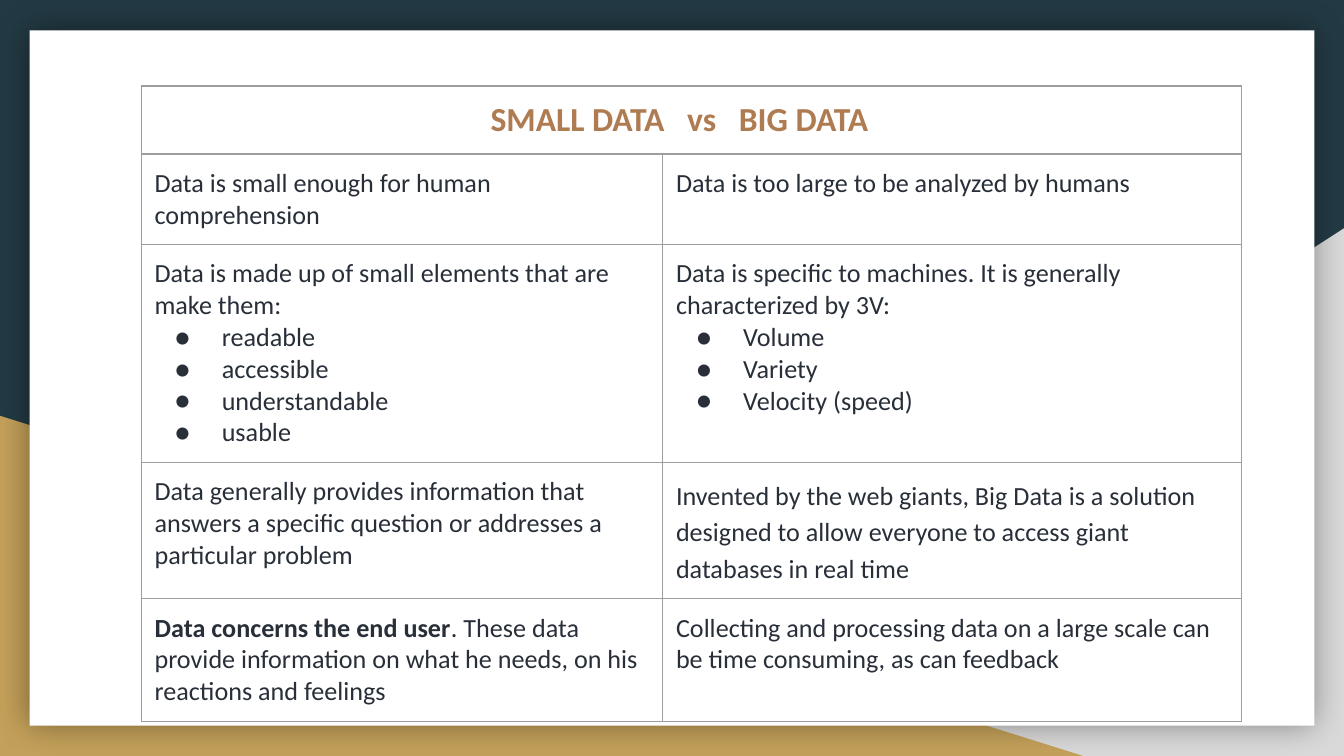
from dataclasses import dataclass
from typing import NamedTuple

from lxml.etree import SubElement
from pptx import Presentation
from pptx.dml.color import RGBColor
from pptx.enum.shapes import MSO_SHAPE as Preset
from pptx.oxml.ns import qn
from pptx.util import Emu, Inches, Pt


@dataclass(frozen=True)
class Theme:
    backdrop: str = "233A44"
    grey: str = "D9D9D9"
    gold: str = "C4A15A"
    card: str = "FFFFFF"
    shadow: str = "000000"
    border: str = "9E9E9E"
    heading: str = "AF7B51"
    text: str = "282F39"
    font: str = "Calibri"
    heading_size: int = 18
    text_size: int = 14
    border_width: float = 0.75


class Panel(NamedTuple):
    """A background shape, placed by shares of the slide's size."""
    preset: Preset
    left: float
    top: float
    width: float
    height: float
    color: str
    mirrored: bool = False
    glow: bool = False


class Span(NamedTuple):
    text: str
    bold: bool = False
    tracking: int = 0  # hundredths of a point


class Line(NamedTuple):
    spans: tuple[Span, ...]
    bullet: bool = False
    indent: float = 0
    spacing: float | None = None


THEME = Theme()
WIDTH, HEIGHT = Inches(10), Inches(5.625)
PANELS = (
    Panel(Preset.RIGHT_TRIANGLE, 0.392, 0.302, 0.608, 0.698, THEME.grey, mirrored=True),
    Panel(Preset.RIGHT_TRIANGLE, 0, 0.55, 0.806, 0.45, THEME.gold),
    Panel(Preset.RECTANGLE, 0.022, 0.04, 0.956, 0.92, THEME.card, glow=True),
)
TABLE_LEFT, TABLE_TOP = 1.05, 0.64
COLUMNS = (3.88, 4.31)
ROWS = (0.39, 0.39, 1.45, 0.88, 0.82)
CELL_INSET = 0.1
BULLET_INDENT, BULLET_HANG = 0.5, -0.35


def plain(text: str, spacing: float | None = None) -> Line:
    return Line((Span(text),), spacing=spacing)


def listing(intro: str, *items: str) -> tuple[Line, ...]:
    bullets = (Line((Span(item),), bullet=True, indent=BULLET_INDENT) for item in items)
    return (plain(intro), *bullets)


WIDE_SPACE = Span(" ", bold=True, tracking=800)
HEADING = Line((Span("SMALL DATA", True), WIDE_SPACE, Span("vs", True),
                WIDE_SPACE, Span("BIG DATA", True)), indent=2.5)
COMPARISONS = (
    ((plain("Data is small enough for human comprehension"),),
     (plain("Data is too large to be analyzed by humans"),)),
    (listing("Data is made up of small elements that are make them:",
             "readable", "accessible", "understandable", "usable"),
     listing("Data is specific to machines. It is generally characterized by 3V:",
             "Volume", "Variety", "Velocity (speed)")),
    ((plain("Data generally provides information that answers a specific question "
            "or addresses a particular problem"),),
     (plain("Invented by the web giants, Big Data is a solution designed to allow "
            "everyone to access giant databases in real time", spacing=1.15),)),
    ((Line((Span("Data concerns the end user", bold=True),
            Span(". These data provide information on what he needs, "
                 "on his reactions and feelings"))),),
     (plain("Collecting and processing data on a large scale can be time consuming, "
            "as can feedback"),)),
)


def add_color(parent, color: str):
    fill = SubElement(parent, qn("a:solidFill"))
    return SubElement(fill, qn("a:srgbClr"), val=color)


def draw_panel(page, panel: Panel) -> None:
    shape = page.shapes.add_shape(
        panel.preset, Emu(int(WIDTH * panel.left)), Emu(int(HEIGHT * panel.top)),
        Emu(int(WIDTH * panel.width)), Emu(int(HEIGHT * panel.height)))
    shape.shadow.inherit = False
    shape.fill.solid()
    shape.fill.fore_color.rgb = RGBColor.from_string(panel.color)
    shape.line.fill.background()
    properties = shape._element.spPr
    if panel.mirrored:
        properties.find(qn("a:xfrm")).set("flipH", "1")
    if panel.glow:
        effects = properties.find(qn("a:effectLst"))
        shadow = SubElement(effects, qn("a:outerShdw"), blurRad=str(Pt(18)),
                            dist="0", dir="0", algn="ctr", rotWithShape="0")
        color = SubElement(shadow, qn("a:srgbClr"), val=THEME.shadow)
        SubElement(color, qn("a:alpha"), val="40000")


def write_line(para, line: Line, size: int, color: str) -> None:
    para.line_spacing = line.spacing
    layout = para._p.get_or_add_pPr()
    layout.set("marL", str(Inches(line.indent)))
    layout.set("indent", str(Inches(BULLET_HANG) if line.bullet else 0))
    if line.bullet:
        SubElement(SubElement(layout, qn("a:buClr")), qn("a:srgbClr"), val=color)
        SubElement(layout, qn("a:buFont"), typeface=THEME.font)
        SubElement(layout, qn("a:buChar"), char="●")
    for span in line.spans:
        run = para.add_run()
        run.text = span.text
        formats = {"name": THEME.font, "size": Pt(size), "bold": span.bold}
        for name, value in formats.items():
            setattr(run.font, name, value)
        run.font.color.rgb = RGBColor.from_string(color)
        if span.tracking:
            run._r.get_or_add_rPr().set("spc", str(span.tracking))


def write_cell(cell, lines: tuple[Line, ...], size: int, color: str) -> None:
    for number, line in enumerate(lines):
        frame = cell.text_frame
        para = frame.add_paragraph() if number else frame.paragraphs[0]
        write_line(para, line, size, color)


def style_cell(cell) -> None:
    for side in ("left", "right", "top", "bottom"):
        setattr(cell, f"margin_{side}", Inches(CELL_INSET))
    properties = cell._tc.get_or_add_tcPr()
    for edge in ("lnL", "lnR", "lnT", "lnB"):
        border = SubElement(properties, qn(f"a:{edge}"), w=str(Pt(THEME.border_width)))
        add_color(border, THEME.border)
    cell.fill.background()


def draw_table(page) -> None:
    table = page.shapes.add_table(
        len(ROWS), len(COLUMNS), Inches(TABLE_LEFT), Inches(TABLE_TOP),
        Inches(sum(COLUMNS)), Inches(sum(ROWS))).table
    table.first_row = table.horz_banding = False
    for column, width in zip(table.columns, COLUMNS):
        column.width = Inches(width)
    for row, height in zip(table.rows, ROWS):
        row.height = Inches(height)
        for cell in row.cells:
            style_cell(cell)
    table.cell(0, 0).merge(table.cell(0, len(COLUMNS) - 1))
    write_cell(table.cell(0, 0), (HEADING,), THEME.heading_size, THEME.heading)
    for row, pair in enumerate(COMPARISONS, start=1):
        for column, lines in enumerate(pair):
            write_cell(table.cell(row, column), lines, THEME.text_size, THEME.text)


def main() -> None:
    deck = Presentation()
    deck.slide_width, deck.slide_height = WIDTH, HEIGHT
    page = deck.slides.add_slide(deck.slide_layouts[6])
    page.background.fill.solid()
    page.background.fill.fore_color.rgb = RGBColor.from_string(THEME.backdrop)
    for panel in PANELS:
        draw_panel(page, panel)
    draw_table(page)
    deck.save("out.pptx")


if __name__ == "__main__":
    main()
